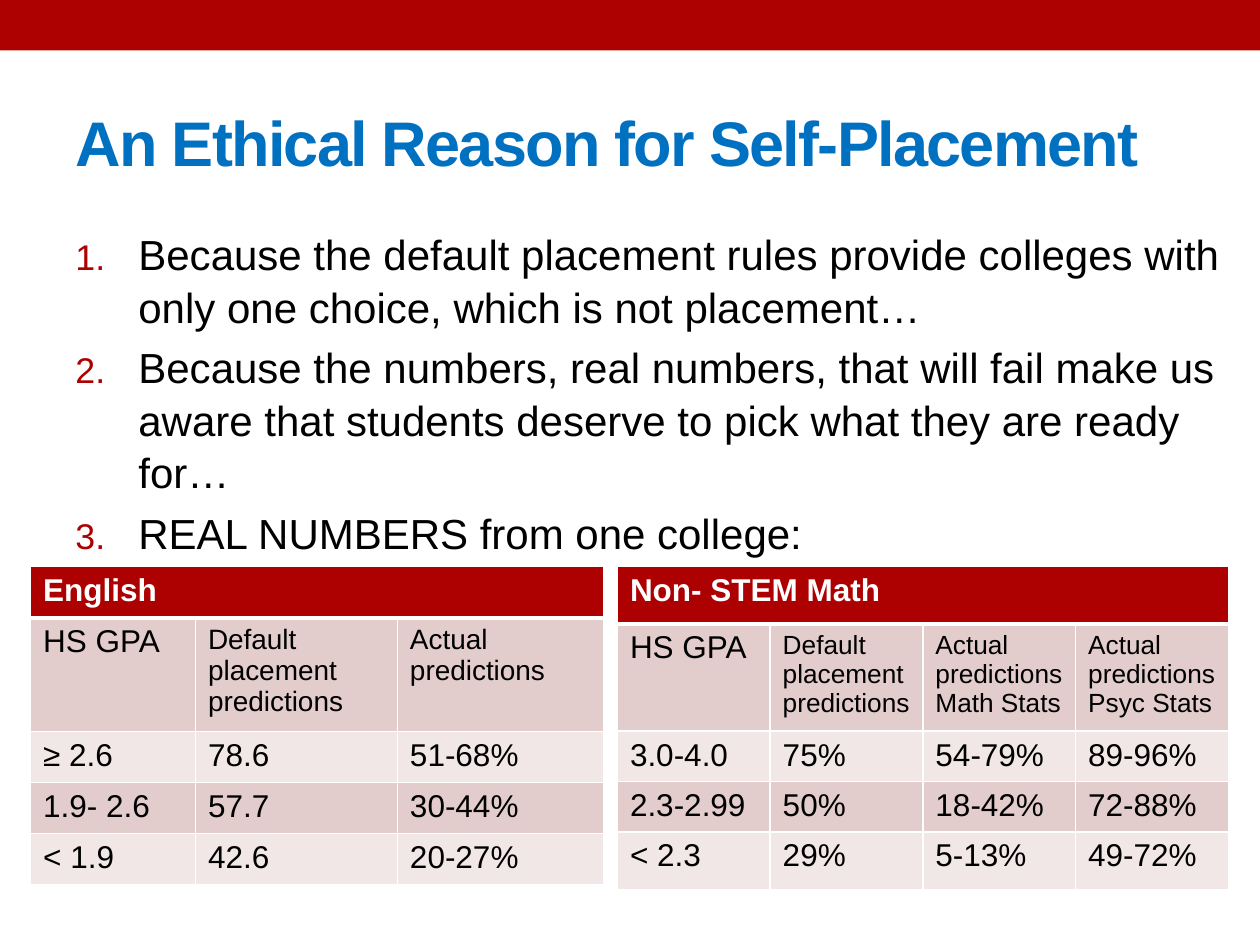
import pptx
import pptx.util
import pptx.dml.color
import pptx.enum.shapes
import pptx.enum.text
from pptx.oxml.ns import qn
from lxml import etree

Pt = pptx.util.Pt
RED, BLUE, BLACK, WHITE = "AD0101", "0070C0", "000000", "FFFFFF"
BANDS = ("E3CCCC", "F1E7E7")

# Content
TITLE = "An Ethical Reason for Self-Placement"
REASONS = [
    "Because the default placement rules provide colleges with only one choice, "
    "which is not placement…",
    "Because the numbers, real numbers, that will fail make us aware that students "
    "deserve to pick what they are ready for…",
    "REAL NUMBERS from one college:",
]
TABLES = [
    dict(heading="English", left=17.5, label_size=16,
         cols=(94.2, 115.4, 118), rows=(29.5, 59.5, 29.2, 29.2, 29.2),
         body=[("HS GPA", "Default placement predictions", "Actual predictions"),
               ("≥ 2.6", "78.6", "51-68%"),
               ("1.9- 2.6", "57.7", "30-44%"),
               ("< 1.9", "42.6", "20-27%")]),
    dict(heading="Non- STEM Math", left=352.8, label_size=15,
         cols=(87.3,) * 4, rows=(33, 59, 28, 28, 33),
         body=[("HS GPA", "Default placement predictions",
                "Actual predictions\nMath Stats", "Actual predictions\nPsyc Stats"),
               ("3.0-4.0", "75%", "54-79%", "89-96%"),
               ("2.3-2.99", "50%", "18-42%", "72-88%"),
               ("< 2.3", "29%", "5-13%", "49-72%")]),
]
TABLE_TOP = 323.6


def rgb(color):
    return pptx.dml.color.RGBColor.from_string(color)


def style(font, color, **values):
    font.color.rgb = rgb(color)
    for name, value in {"name": "Arial", **values}.items():
        setattr(font, name, value)


def number_paragraph(p):
    pPr = p._p.get_or_add_pPr()
    pPr.set("marL", str(Pt(36)))
    pPr.set("indent", str(-Pt(36)))
    color = etree.SubElement(pPr, qn("a:buClr"))
    etree.SubElement(color, qn("a:srgbClr"), val=RED)
    etree.SubElement(pPr, qn("a:buSzPct"), val="85000")
    etree.SubElement(pPr, qn("a:buFont"), typeface="Arial")
    etree.SubElement(pPr, qn("a:buAutoNum"), type="arabicPeriod")


def set_borders(cell, top, bottom):
    tcPr = cell._tc.get_or_add_tcPr()
    for side, width in (("L", 1), ("R", 1), ("T", top), ("B", bottom)):
        ln = etree.SubElement(tcPr, qn("a:ln" + side), w=str(Pt(width)))
        fill = etree.SubElement(ln, qn("a:solidFill"))
        etree.SubElement(fill, qn("a:srgbClr"), val=WHITE)


def fill_cell(cell, text, fill, color, size, bold, top=1, bottom=1):
    set_borders(cell, top, bottom)
    cell.fill.solid()
    cell.fill.fore_color.rgb = rgb(fill)
    cell.text_frame.text = text
    for p in cell.text_frame.paragraphs:
        for r in p.runs:
            style(r.font, color, size=Pt(size), bold=bold)


def add_results(s, data):
    cols, rows = data["cols"], data["rows"]
    table = s.shapes.add_table(len(rows), len(cols), Pt(data["left"]), Pt(TABLE_TOP),
                               Pt(sum(cols)), Pt(sum(rows))).table
    for column, width in zip(table.columns, cols):
        column.width = Pt(width)
    for row, height in zip(table.rows, rows):
        row.height = Pt(height)
    # Heading row spans the table
    table.cell(0, 0).merge(table.cell(0, len(cols) - 1))
    for j in range(len(cols)):
        fill_cell(table.cell(0, j), "" if j else data["heading"],
                  RED, WHITE, 18, True, bottom=3)
    # Label row and values, in alternating bands
    for i, values in enumerate(data["body"]):
        for j, text in enumerate(values):
            size = data["label_size"] if i == 0 and j > 0 else 18
            fill_cell(table.cell(i + 1, j), text, BANDS[i % 2], BLACK, size, False,
                      top=3 if i == 0 else 1)


prs = pptx.Presentation()
prs.slide_width, prs.slide_height = Pt(720), Pt(540)
s = prs.slides.add_slide(prs.slide_layouts[5])

# Top bar
bar = s.shapes.add_shape(pptx.enum.shapes.MSO_SHAPE.RECTANGLE, 0, 0, Pt(720), Pt(28.8))
bar.shadow.inherit = False
bar.fill.solid()
bar.fill.fore_color.rgb = rgb(RED)
bar.line.fill.background()

# Title
sp = s.shapes.title
sp.left, sp.top, sp.width, sp.height = Pt(36), Pt(41.8), Pt(648), Pt(77.8)
tf = sp.text_frame
tf.vertical_anchor = pptx.enum.text.MSO_ANCHOR.MIDDLE
tf.auto_size = pptx.enum.text.MSO_AUTO_SIZE.NONE
p = tf.paragraphs[0]
p.alignment = pptx.enum.text.PP_ALIGN.LEFT
r = p.add_run()
r.text = TITLE
style(r.font, BLUE, size=Pt(36), bold=True)
r.font._element.set("spc", "-100")

# Numbered reasons
tf = s.shapes.add_textbox(Pt(36), Pt(126), Pt(671), Pt(384)).text_frame
tf.word_wrap = True
for i, reason in enumerate(REASONS):
    p = tf.add_paragraph() if i else tf.paragraphs[0]
    number_paragraph(p)
    p.line_spacing = 1.04
    if i:
        p.space_before = Pt(4.8)
    r = p.add_run()
    r.text = reason
    style(r.font, BLACK, size=Pt(24))

# Result tables
for data in TABLES:
    add_results(s, data)

prs.save("out.pptx")
